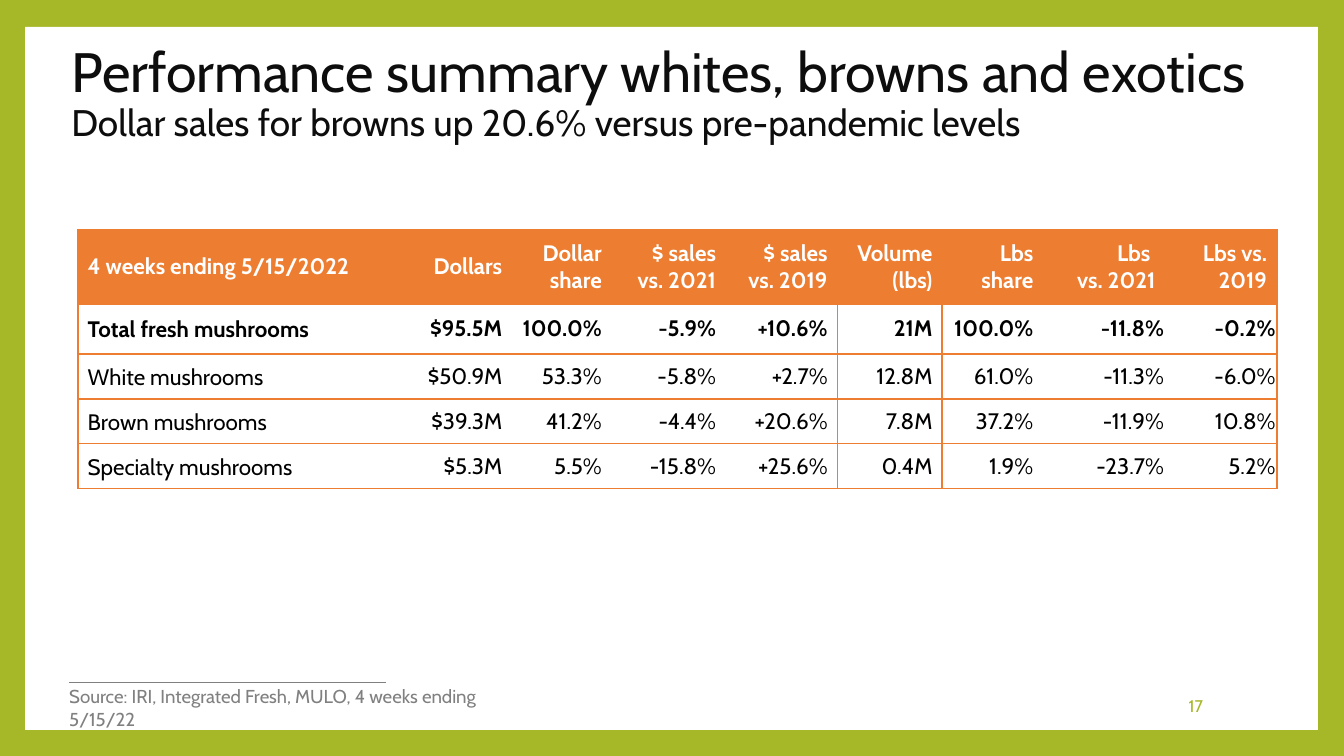
import pptx
import pptx.dml.color
import pptx.enum.shapes
import pptx.enum.text
import pptx.oxml
import pptx.oxml.ns
import pptx.util
from lxml import etree

Pt = pptx.util.Pt
RGBColor = pptx.dml.color.RGBColor
Align = pptx.enum.text.PP_ALIGN
Anchor = pptx.enum.text.MSO_ANCHOR
qn = pptx.oxml.ns.qn

FONT = "Cabin"
GREEN = RGBColor(0xA6, 0xB7, 0x27)
ORANGE = RGBColor(0xED, 0x7D, 0x31)
WHITE = RGBColor(0xFF, 0xFF, 0xFF)
BLACK = RGBColor(0, 0, 0)
INK = RGBColor(0x0D, 0x0D, 0x0D)
GRAY = RGBColor(0x80, 0x80, 0x80)
PLAIN_TABLE_STYLE = "{2D5ABB26-0587-4C30-8999-92F81FD0307C}"

TITLE = "Performance summary whites, browns and exotics"
SUBTITLE = "Dollar sales for browns up 20.6% versus pre-pandemic levels"
SOURCE = "Source: IRI, Integrated Fresh, MULO, 4 weeks ending 5/15/22"
PAGE_NUMBER = "17"
ROWS = [
    ["4 weeks ending 5/15/2022", "Dollars", "Dollar share", "$ sales vs. 2021",
     "$ sales vs. 2019", "Volume (lbs)", "Lbs\nshare", "Lbs \vvs. 2021", "Lbs vs. 2019"],
    ["Total fresh mushrooms", "$95.5M", "100.0%", "-5.9%", "+10.6%",
     "21M", "100.0%", "-11.8%", "-0.2%"],
    ["White mushrooms", "$50.9M", "53.3%", "-5.8%", "+2.7%",
     "12.8M", "61.0%", "-11.3%", "-6.0%"],
    ["Brown mushrooms", "$39.3M", "41.2%", "-4.4%", "+20.6%",
     "7.8M", "37.2%", "-11.9%", "10.8%"],
    ["Specialty mushrooms", "$5.3M", "5.5%", "-15.8%", "+25.6%",
     "0.4M", "1.9%", "-23.7%", "5.2%"],
]
COLUMN_WIDTHS = [170.6, 61.9, 53.3, 61.2, 59.8, 56.2, 54, 65.5, 59.8]
ROW_HEIGHTS = [39.6, 27, 24, 24, 24]
LEFT_RULED = (0, 5)
RIGHT_RULED = (4, 8)
TIGHT_COLUMNS = (7, 8)


def write_text(frame, text, size=12, color=BLACK, bold=False, align=Align.LEFT,
               spacing=None):
    frame.text = text
    for para in frame.paragraphs:
        para.alignment = align
        if spacing:
            para.line_spacing = spacing
        for span in para.runs:
            span.font.name = FONT
            span.font.size = Pt(size)
            span.font.bold = bold
            span.font.color.rgb = color


def add_label(page, left, top, width, height, text, anchor=Anchor.TOP, **style):
    box = page.shapes.add_textbox(Pt(left), Pt(top), Pt(width), Pt(height))
    box.text_frame.word_wrap = True
    box.text_frame.vertical_anchor = anchor
    write_text(box.text_frame, text, **style)


def add_borders(cell, sides):
    properties = cell._tc.get_or_add_tcPr()
    for side in sides:
        line = etree.SubElement(properties, qn("a:ln" + side), w=str(Pt(1)))
        fill = etree.SubElement(line, qn("a:solidFill"))
        etree.SubElement(fill, qn("a:srgbClr"), val=str(ORANGE))


def add_frame(page):
    page.background.fill.solid()
    page.background.fill.fore_color.rgb = GREEN
    panel = page.shapes.add_shape(pptx.enum.shapes.MSO_SHAPE.RECTANGLE,
                                  Pt(13.5), Pt(14.4), Pt(692.6), Pt(376.6))
    panel.shadow.inherit = False
    panel.fill.solid()
    panel.fill.fore_color.rgb = WHITE
    panel.line.fill.background()
    page.shapes._spTree.insert(2, panel._element)
    rule = page.shapes.add_connector(pptx.enum.shapes.MSO_CONNECTOR.STRAIGHT,
                                     Pt(36.9), Pt(365.6), Pt(206.7), Pt(365.6))
    rule.line.color.rgb = GRAY
    rule.line.width = Pt(0.79)
    etree.SubElement(rule._element.spPr, qn("a:effectLst"))


def add_title(page):
    title = page.shapes.title
    title.left, title.top, title.width, title.height = Pt(31), Pt(22.3), Pt(674.6), Pt(56.9)
    frame = title.text_frame
    frame.word_wrap = True
    frame.auto_size = pptx.enum.text.MSO_AUTO_SIZE.NONE
    frame.vertical_anchor = Anchor.MIDDLE
    write_text(frame, TITLE + "\v" + SUBTITLE, size=29.7, color=INK, spacing=0.9)
    frame.paragraphs[0].runs[1].font.size = Pt(19.8)


def add_sales_table(page):
    holder = page.shapes.add_table(len(ROWS), len(COLUMN_WIDTHS), Pt(41.8), Pt(123.1),
                                   Pt(sum(COLUMN_WIDTHS)), Pt(sum(ROW_HEIGHTS)))
    table = holder.table
    table.first_row = table.horz_banding = False
    table._tbl.tblPr.find(qn("a:tableStyleId")).text = PLAIN_TABLE_STYLE
    for column, width in zip(table.columns, COLUMN_WIDTHS):
        column.width = Pt(width)
    for row, height in zip(table.rows, ROW_HEIGHTS):
        row.height = Pt(height)

    for r, values in enumerate(ROWS):
        for c, value in enumerate(values):
            cell = table.cell(r, c)
            header = r == 0
            side_margin = 0.7 if c in TIGHT_COLUMNS and not header else 5.2
            cell.margin_left = cell.margin_right = Pt(side_margin)
            cell.margin_top = cell.margin_bottom = Pt(0)
            cell.vertical_anchor = Anchor.MIDDLE
            write_text(cell.text_frame, value, color=WHITE if header else BLACK,
                       bold=r < 2, align=Align.RIGHT if c else Align.LEFT,
                       spacing=1.07 if r and not c else None)
            sides = ["L"] * (c in LEFT_RULED) + ["R"] * (c in RIGHT_RULED) + ["T", "B"]
            add_borders(cell, sides)
            if header:
                cell.fill.solid()
                cell.fill.fore_color.rgb = ORANGE
            else:
                cell.fill.background()


def main():
    deck = pptx.Presentation()
    deck.slide_width, deck.slide_height = Pt(720), Pt(405)
    page = deck.slides.add_slide(deck.slide_layouts[5])
    add_frame(page)
    add_title(page)
    add_label(page, 550.8, 367.2, 100.8, 21.6, PAGE_NUMBER, anchor=Anchor.MIDDLE,
              size=9, color=GREEN, align=Align.RIGHT)
    add_label(page, 30, 363.6, 267, 19.4, SOURCE, size=10, color=GRAY)
    add_sales_table(page)
    deck.save("out.pptx")


if __name__ == "__main__":
    main()
